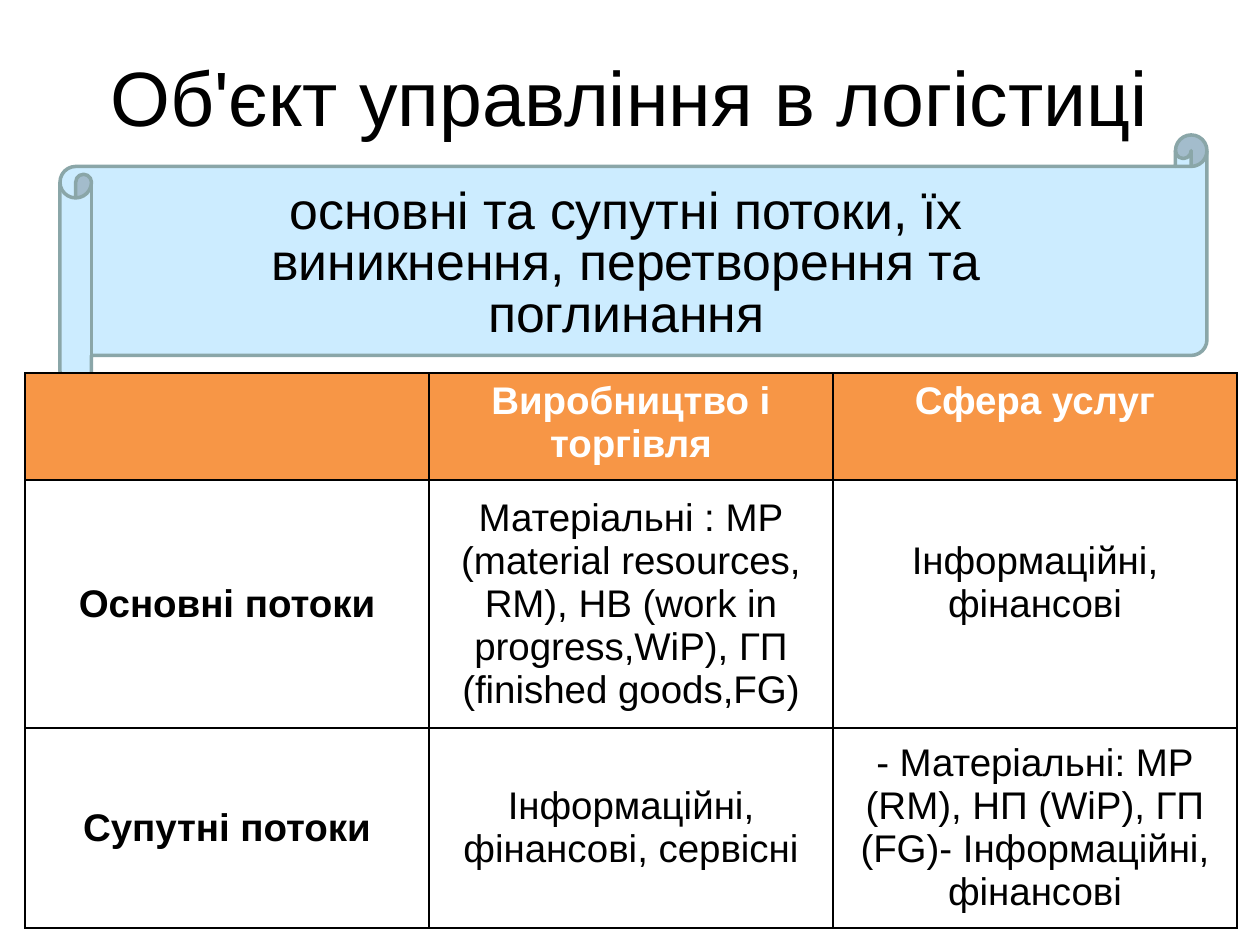
import pptx
import pptx.util
import pptx.dml.color
import pptx.enum.shapes
import pptx.enum.text
import pptx.oxml
import pptx.oxml.ns
from dataclasses import dataclass

SCALE = 914400 / 126
ANCHOR = pptx.enum.text.MSO_ANCHOR


def px(n):
    return pptx.util.Emu(round(n * SCALE))


def rgb(code):
    return pptx.dml.color.RGBColor.from_string(code)


@dataclass(frozen=True)
class Theme:
    font: str = "Arial"
    ink: str = "000000"
    pale: str = "FFFFFF"
    scroll: str = "CCECFF"
    edge: str = "8AA6A8"
    head: str = "F79646"
    title: float = 44
    body: float = 29.6
    cell: float = 22


def write(frame, text, size, color, font, bold=False, space=None, left=0):
    """Fill a text frame with one centred paragraph."""
    para = frame.paragraphs[0]
    para.alignment = pptx.enum.text.PP_ALIGN.CENTER
    if space:
        para.line_spacing = space
    if left:
        para._p.get_or_add_pPr().set("marL", str(px(left)))
    run = para.add_run()
    run.text = text
    run.font.name = font
    run.font.size = pptx.util.Pt(size)
    run.font.bold = bold
    run.font.color.rgb = rgb(color)


def frame_cell(cell, color):
    """Draw a 1 pt border on all four sides of a cell."""
    props = cell._tc.get_or_add_tcPr()
    for i, side in enumerate(("lnL", "lnR", "lnT", "lnB")):
        props.insert(i, pptx.oxml.parse_xml(
            f'<a:{side} {pptx.oxml.ns.nsdecls("a")} w="12700"><a:solidFill>'
            f'<a:srgbClr val="{color}"/></a:solidFill></a:{side}>'))


class Page:
    def __init__(self, deck, theme):
        self.theme = theme
        self.slide = deck.slides.add_slide(deck.slide_layouts[6])

    def text(self, box, text, size, anchor=ANCHOR.TOP, top=6, base=6, **style):
        frame = self.slide.shapes.add_textbox(*map(px, box)).text_frame
        frame.word_wrap = True
        frame.vertical_anchor = anchor
        frame.margin_top, frame.margin_bottom = px(top), px(base)
        write(frame, text, size, self.theme.ink, self.theme.font, **style)

    def scroll(self, box):
        kind = pptx.enum.shapes.MSO_SHAPE.HORIZONTAL_SCROLL
        shape = self.slide.shapes.add_shape(kind, *map(px, box))
        shape.shadow.inherit = False
        shape.fill.solid()
        shape.fill.fore_color.rgb = rgb(self.theme.scroll)
        shape.line.color.rgb = rgb(self.theme.edge)
        shape.line.width = pptx.util.Pt(2)

    def table(self, left, top, wide, highs, rows):
        theme, count = self.theme, len(rows[0])
        grid = self.slide.shapes.add_table(
            len(rows), count, px(left), px(top),
            px(wide * count), px(sum(highs))).table
        for col in grid.columns:
            col.width = px(wide)
        for r, (high, row) in enumerate(zip(highs, rows)):
            grid.rows[r].height = px(high)
            for c, text in enumerate(row):
                self.cell(grid.cell(r, c), text, r == 0, c == 0)
        return grid

    def cell(self, cell, text, head, side):
        theme = self.theme
        cell.fill.solid()
        cell.fill.fore_color.rgb = rgb(theme.head if head else theme.pale)
        cell.vertical_anchor = ANCHOR.TOP if head else ANCHOR.MIDDLE
        frame_cell(cell, theme.ink)
        if text:
            write(cell.text_frame, text, theme.cell,
                  theme.pale if head else theme.ink, theme.font,
                  bold=head or side)


def main():
    deck = pptx.Presentation()
    deck.slide_width, deck.slide_height = px(1260), px(945)
    theme = Theme()
    page = Page(deck, theme)
    page.scroll((60, 135, 1147, 252))
    page.text((63, 38, 1134, 117), "Об'єкт управління в логістиці",
              theme.title, anchor=ANCHOR.BOTTOM, base=13)
    page.text((161, 178, 893, 166),
              "основні та супутні потоки, їх виникнення, "
              "перетворення та поглинання",
              theme.body, top=10, space=0.83, left=38)
    grid = page.table(25, 373, 404, (107, 248, 200), (
        ("", "Виробництво і торгівля", "Сфера услуг"),
        ("Основні потоки",
         "Матеріальні : МР (material resources, RM), "
         "НВ (work in progress,WiP), ГП (finished goods,FG)",
         "Інформаційні, фінансові"),
        ("Супутні потоки", "Інформаційні, фінансові, сервісні",
         "- Матеріальні: МР (RM), НП (WiP), ГП (FG)"
         "- Інформаційні, фінансові")))
    # This cell's text sits half a line above the middle.
    grid.cell(1, 2).margin_bottom = px(49)
    deck.save("out.pptx")


if __name__ == "__main__":
    main()
